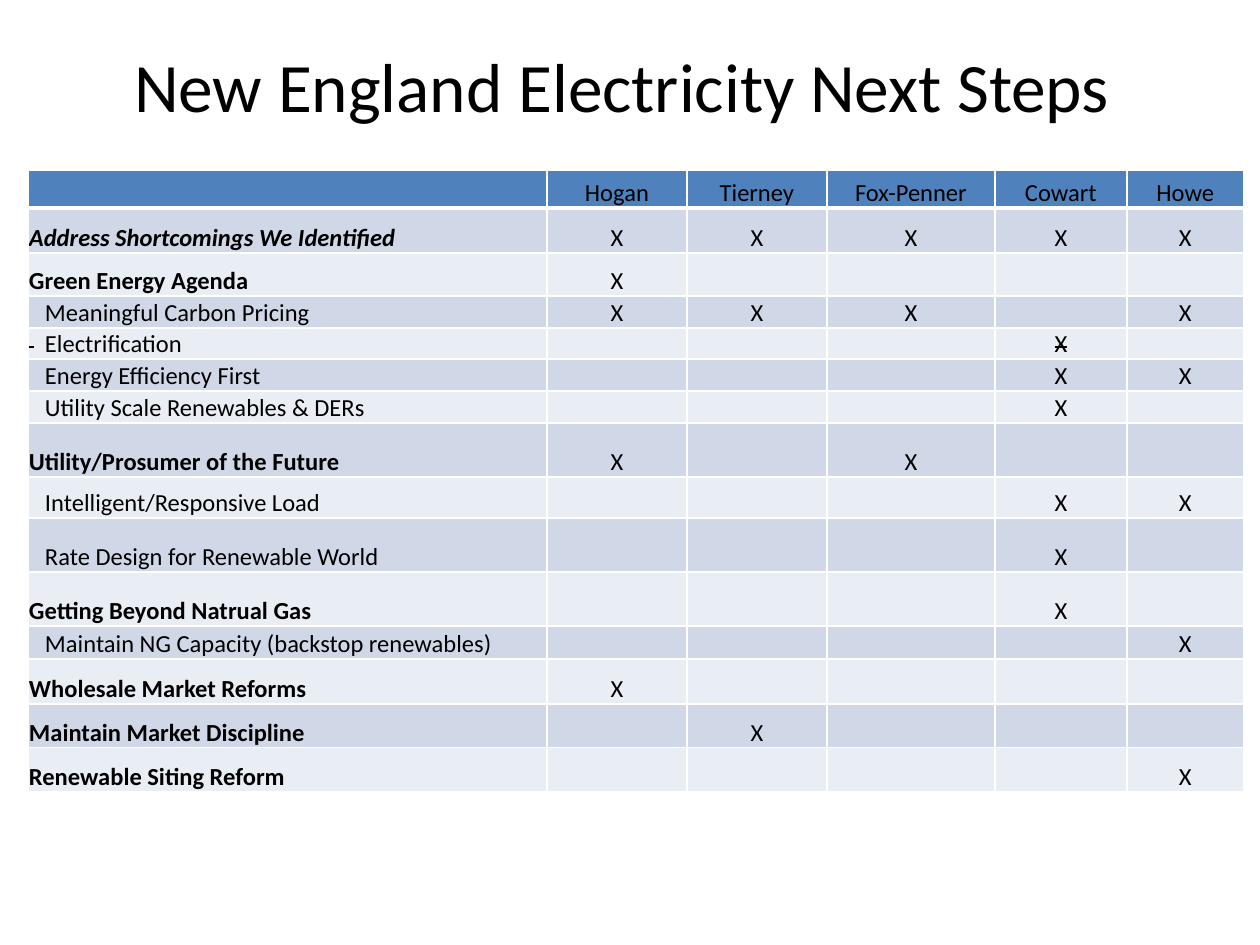
from dataclasses import dataclass

from lxml import etree
from pptx import Presentation
from pptx.dml.color import RGBColor
from pptx.enum.text import MSO_ANCHOR, MSO_AUTO_SIZE, PP_ALIGN
from pptx.oxml.ns import qn
from pptx.util import Pt

CENTER, LEFT = PP_ALIGN.CENTER, PP_ALIGN.LEFT
MIDDLE, BOTTOM = MSO_ANCHOR.MIDDLE, MSO_ANCHOR.BOTTOM
NO_AUTOFIT = MSO_AUTO_SIZE.NONE
TITLE_ONLY = 5
PIXELS_PER_INCH = 126


@dataclass(frozen=True)
class Theme:
    font: str = "Calibri"
    title_size: float = 39.6
    table_size: int = 14
    text: str = "000000"
    header: str = "4F81BD"
    bands: tuple[str, str] = ("D0D8E8", "E9EDF4")
    border: str = "FFFFFF"
    border_width: int = 1
    header_rule_width: int = 3


@dataclass(frozen=True)
class Step:
    """One table row; marks holds the initials of the speakers who support it."""
    label: str
    height: int
    marks: str
    heading: bool = False
    italic: bool = False
    struck: bool = False


THEME = Theme()
TITLE = "New England Electricity Next Steps "
SPEAKERS = {"H": "Hogan", "T": "Tierney", "F": "Fox-Penner", "C": "Cowart", "W": "Howe"}
COLUMN_WIDTHS = (519, 140, 140, 168, 132, 117)
HEADER_HEIGHT = 38
INDENT = 16
STEPS = (
    Step("Address Shortcomings We Identified", 45, "HTFCW", heading=True, italic=True),
    Step("Green Energy Agenda", 43, "H", heading=True),
    Step("Meaningful Carbon Pricing", 32, "HTFW"),
    Step("Electrification", 31, "C", struck=True),
    Step("Energy Efficiency First", 32, "CW"),
    Step("Utility Scale Renewables & DERs", 32, "C"),
    Step("Utility/Prosumer of the Future", 54, "HF", heading=True),
    Step("Intelligent/Responsive Load", 41, "CW"),
    Step("Rate Design for Renewable World", 54, "C"),
    Step("Getting Beyond Natrual Gas", 54, "C", heading=True),
    Step("Maintain NG Capacity (backstop renewables)", 33, "W"),
    Step("Wholesale Market Reforms", 45, "H", heading=True),
    Step("Maintain Market Discipline", 44, "T", heading=True),
    Step("Renewable Siting Reform", 44, "W", heading=True),
)


def px(length: int) -> int:
    return round(length * 914400 / PIXELS_PER_INCH)


def format_run(run, size: float, bold: bool = False, italic: bool = False) -> None:
    font = run.font
    font.name, font.size = THEME.font, Pt(size)
    font.bold, font.italic = bold, italic
    font.color.rgb = RGBColor.from_string(THEME.text)


def strike(run) -> None:
    run._r.get_or_add_rPr().set("strike", "sngStrike")


def set_borders(cell, bottom_width: int) -> None:
    properties = cell._tc.get_or_add_tcPr()
    for side in ("L", "R", "T", "B"):
        width = bottom_width if side == "B" else THEME.border_width
        line = etree.SubElement(properties, qn(f"a:ln{side}"), w=str(Pt(width)))
        fill = etree.SubElement(line, qn("a:solidFill"))
        etree.SubElement(fill, qn("a:srgbClr"), val=THEME.border)


def fill_cell(cell, text: str, color: str, align=CENTER, bold: bool = False,
              italic: bool = False, bottom_width: int = THEME.border_width):
    """Set a cell's text and look, and return its paragraph."""
    set_borders(cell, bottom_width)
    cell.fill.solid()
    cell.fill.fore_color.rgb = RGBColor.from_string(color)
    cell.margin_left = cell.margin_right = cell.margin_top = px(1)
    cell.margin_bottom = 0
    cell.vertical_anchor = BOTTOM
    paragraph = cell.text_frame.paragraphs[0]
    paragraph.alignment = align
    if text:
        paragraph.text = text
        format_run(paragraph.runs[0], THEME.table_size, bold, italic)
    else:
        # Keeps an empty cell from stretching its row
        etree.SubElement(paragraph._p, qn("a:endParaRPr"), sz=str(THEME.table_size * 100))
    return paragraph


def indent_label(paragraph, struck: bool) -> None:
    """Indent a sub-step; a struck one starts with a crossed-out space."""
    properties = paragraph._p.get_or_add_pPr()
    properties.set("marL", str(px(INDENT)))
    properties.set("indent", str(-px(INDENT) if struck else 0))
    if struck:
        label = paragraph.runs[0].text
        paragraph.runs[0].text = " "
        strike(paragraph.runs[0])
        run = paragraph.add_run()
        run.text = "\t" + label
        format_run(run, THEME.table_size)


def add_title(slide) -> None:
    title = slide.shapes.title
    title.left, title.top, title.width, title.height = map(px, (63, 38, 1134, 93))
    frame = title.text_frame
    frame.text = TITLE
    frame.auto_size = NO_AUTOFIT
    frame.vertical_anchor = MIDDLE
    frame.paragraphs[0].alignment = CENTER
    format_run(frame.paragraphs[0].runs[0], THEME.title_size)


def add_step_table(slide) -> None:
    heights = [HEADER_HEIGHT] + [step.height for step in STEPS]
    table = slide.shapes.add_table(
        len(heights), len(COLUMN_WIDTHS), px(28), px(170),
        px(sum(COLUMN_WIDTHS)), px(sum(heights))).table
    for column, width in zip(table.columns, COLUMN_WIDTHS):
        column.width = px(width)
    for row, height in zip(table.rows, heights):
        row.height = px(height)

    for column, name in enumerate(("", *SPEAKERS.values())):
        fill_cell(table.cell(0, column), name, THEME.header,
                  bottom_width=THEME.header_rule_width)
    for row, step in enumerate(STEPS, start=1):
        color = THEME.bands[(row - 1) % 2]
        label = fill_cell(table.cell(row, 0), step.label, color, LEFT,
                          step.heading, step.italic)
        if not step.heading:
            indent_label(label, step.struck)
        for column, initial in enumerate(SPEAKERS, start=1):
            mark = "X" if initial in step.marks else ""
            paragraph = fill_cell(table.cell(row, column), mark, color)
            if mark and step.struck:
                strike(paragraph.runs[0])


def main() -> None:
    presentation = Presentation()
    presentation.slide_width, presentation.slide_height = px(1260), px(945)
    slide = presentation.slides.add_slide(presentation.slide_layouts[TITLE_ONLY])
    add_title(slide)
    add_step_table(slide)
    presentation.save("out.pptx")


if __name__ == "__main__":
    main()
